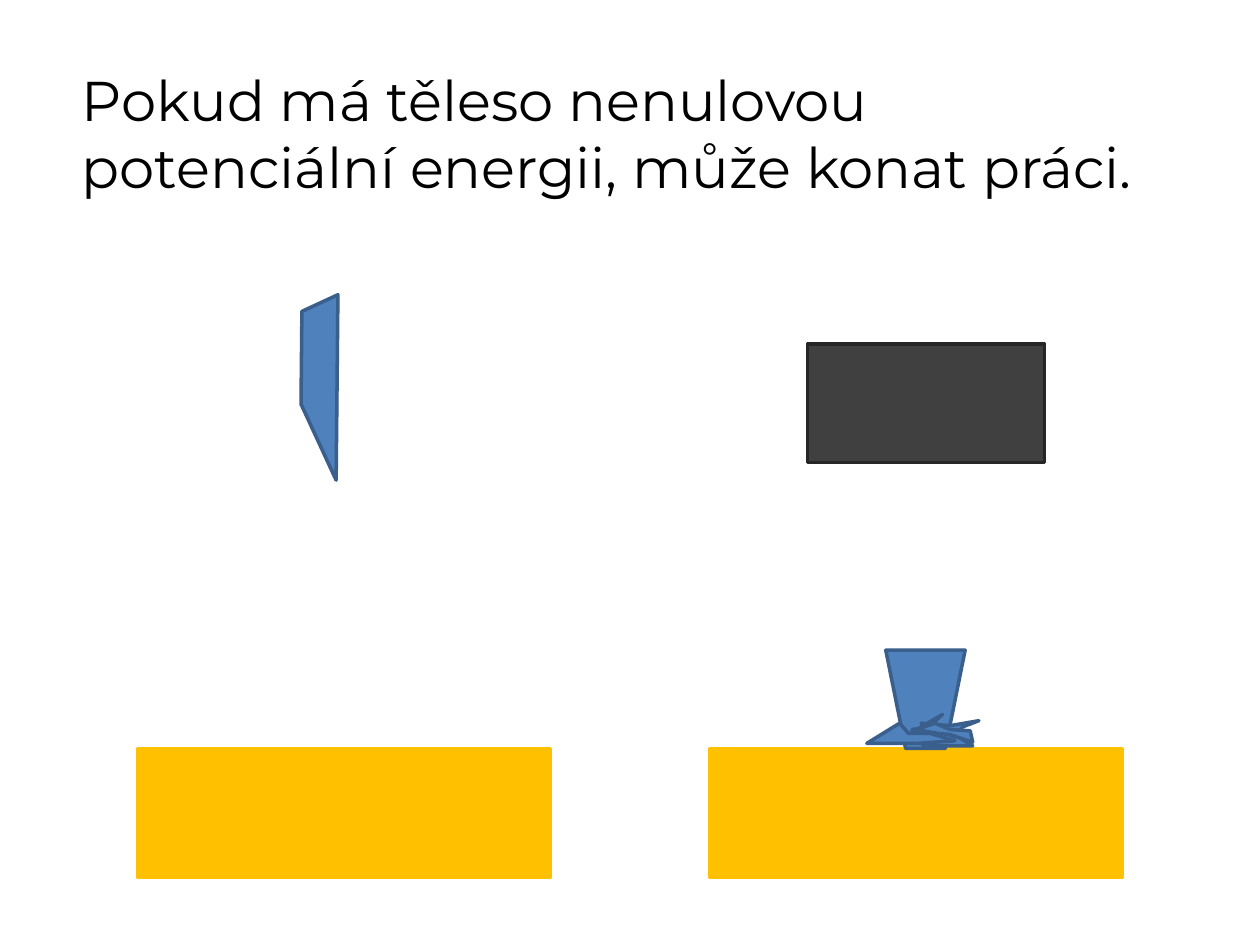
import pptx
import pptx.dml.color
import pptx.enum.shapes
import pptx.util

RGBColor = pptx.dml.color.RGBColor
MSO_SHAPE = pptx.enum.shapes.MSO_SHAPE

BLACK = RGBColor(0x00, 0x00, 0x00)
AMBER = RGBColor(0xFF, 0xC0, 0x00)
BLUE = RGBColor(0x4F, 0x81, 0xBD)
DARK_BLUE = RGBColor(0x3A, 0x5F, 0x8C)
GREY = RGBColor(0x40, 0x40, 0x40)
DARK_GREY = RGBColor(0x26, 0x26, 0x26)

# The slide is a grid of 1000 columns by 750 rows of square cells
COLUMNS, ROWS = 1000, 750
SLIDE_WIDTH = pptx.util.Inches(10)
CELL = SLIDE_WIDTH // COLUMNS

GROUND_TOP = 594
GROUND_LEFTS = (109, 563)

# Outlines of the splinters, as (column, row) points from back to front
SPLINTERS = (
    ((772, 592), (733, 592), (724, 579), (746, 576)),
    ((719, 584), (736, 578), (748, 567)),
    ((731, 574), (758, 585), (764, 577), (777, 572), (754, 576)),
    ((744, 582), (727, 579), (742, 574), (754, 579), (770, 580),
     (772, 589), (754, 583)),
    ((688, 590), (714, 574), (721, 582), (738, 582), (758, 588), (728, 590)),
)


def paint(shape, fill, line):
    shape.shadow.inherit = False
    shape.fill.solid()
    shape.fill.fore_color.rgb = fill
    shape.line.color.rgb = line
    shape.line.width = pptx.util.Pt(2)


def add_body(slide, preset, column, row, columns, rows, fill, line, rotation=0):
    box = [n * CELL for n in (column, row, columns, rows)]
    body = slide.shapes.add_shape(preset, *box)
    body.rotation = rotation
    paint(body, fill, line)


def add_splinter(group, points):
    builder = group.shapes.build_freeform(*points[0], scale=CELL)
    builder.add_line_segments(points[1:], close=True)
    paint(builder.convert_to_shape(), BLUE, DARK_BLUE)


def add_text(slide, text, column, row, columns, rows, *, size, font, color, after):
    box = [n * CELL for n in (column, row, columns, rows)]
    frame = slide.shapes.add_textbox(*box).text_frame
    frame.word_wrap = True
    paragraph = frame.paragraphs[0]
    paragraph.space_after = pptx.util.Pt(after)
    run = paragraph.add_run()
    run.text = text
    run.font.size = pptx.util.Pt(size)
    run.font.name = font
    run.font.color.rgb = color


def main():
    deck = pptx.Presentation()
    deck.slide_width = SLIDE_WIDTH
    deck.slide_height = ROWS * CELL
    slide = deck.slides.add_slide(deck.slide_layouts[6])

    # Statement
    add_text(slide, "Pokud má těleso nenulovou potenciální energii, může konat práci.",
             55, 47, 883, 211, size=32, font="Montserrat", color=BLACK, after=12)

    # Ground on both sides
    for left in GROUND_LEFTS:
        add_body(slide, MSO_SHAPE.RECTANGLE, left, GROUND_TOP, 328, 102, AMBER, AMBER)

    # Left: raised blade
    add_body(slide, MSO_SHAPE.DIAGONAL_STRIPE, 236, 241, 63, 133,
             BLUE, DARK_BLUE, rotation=335.2)

    # Right: vessel under a raised block
    add_body(slide, MSO_SHAPE.TRAPEZOID, 703, GROUND_TOP - 78, 63, 78,
             BLUE, DARK_BLUE, rotation=180)
    add_body(slide, MSO_SHAPE.RECTANGLE, 641, 273, 188, 94, GREY, DARK_GREY)

    # Right: splinters on the ground
    splinters = slide.shapes.add_group_shape()
    for points in SPLINTERS:
        add_splinter(splinters, points)

    deck.save("out.pptx")


if __name__ == "__main__":
    main()
